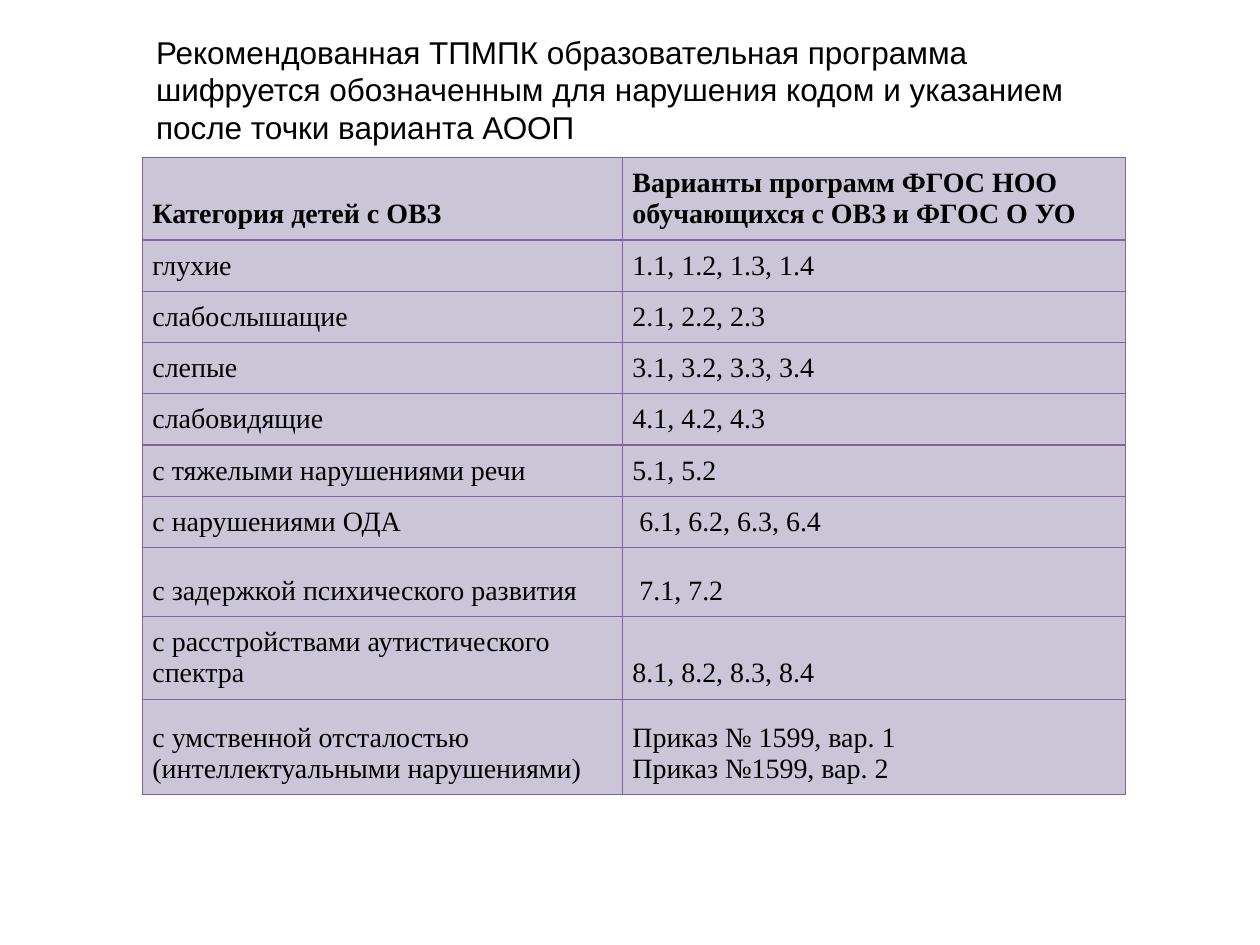
from collections import namedtuple

from lxml.etree import SubElement
from pptx import Presentation
from pptx.dml.color import RGBColor as Color
from pptx.enum.text import MSO_ANCHOR as Anchor, MSO_AUTO_SIZE as AutoSize
from pptx.oxml.ns import qn
from pptx.util import Inches, Pt

Box = namedtuple("Box", "left top width height")

WIDTH, HEIGHT = Inches(10), Inches(7.5)
COLORS = {"text": "000000", "cell": "CCC5D8", "border": "8064A2"}
TITLE_FONT = {"name": "Arial", "size": Pt(18)}
CELL_FONT = {"name": "Times New Roman", "size": Pt(16)}
CELL_MARGIN = Inches(0.08)
CELL_FORMAT = {
    "vertical_anchor": Anchor.BOTTOM,
    "margin_left": CELL_MARGIN,
    "margin_right": CELL_MARGIN,
    "margin_top": CELL_MARGIN,
    "margin_bottom": CELL_MARGIN,
}
BORDER_WIDTH = Pt(0.79)

TITLE = (
    "Рекомендованная ТПМПК образовательная программа шифруется "
    "обозначенным для нарушения кодом и указанием после точки варианта АООП"
)
COLUMN_SHARES = [3.81, 3.99]
ROW_SHARES = [0.55] + [0.35] * 6 + [0.55] * 2 + [0.76]
PROGRAMS = [
    ("Категория детей с ОВЗ ", "Варианты программ ФГОС НОО обучающихся с ОВЗ и ФГОС О УО"),
    ("глухие", "1.1, 1.2, 1.3, 1.4"),
    ("слабослышащие ", "2.1, 2.2, 2.3"),
    ("слепые ", "3.1, 3.2, 3.3, 3.4"),
    ("слабовидящие", "4.1, 4.2, 4.3"),
    ("с тяжелыми нарушениями речи ", "5.1, 5.2"),
    ("с нарушениями ОДА", " 6.1, 6.2, 6.3, 6.4"),
    ("с задержкой психического развития", " 7.1, 7.2 "),
    ("с расстройствами аутистического спектра ", "8.1, 8.2, 8.3, 8.4"),
    (
        "с умственной отсталостью (интеллектуальными нарушениями) ",
        "Приказ № 1599, вар. 1\nПриказ №1599, вар. 2",
    ),
]


def share_box(left, top, width, height):
    return Box(int(WIDTH * left), int(HEIGHT * top), int(WIDTH * width), int(HEIGHT * height))


def set_all(target, values):
    for name, value in values.items():
        setattr(target, name, value)


def write_text(frame, text, font):
    frame.text = text
    for para in frame.paragraphs:
        for span in para.runs:
            set_all(span.font, font)
            span.font.color.rgb = Color.from_string(COLORS["text"])


def add_borders(cell):
    properties = cell._tc.get_or_add_tcPr()
    for position, side in enumerate(("lnL", "lnR", "lnT", "lnB")):
        line = SubElement(properties, qn(f"a:{side}"), w=str(BORDER_WIDTH))
        fill = SubElement(line, qn("a:solidFill"))
        SubElement(fill, qn("a:srgbClr"), val=COLORS["border"])
        properties.insert(position, line)


def add_title(page, box):
    frame = page.shapes.add_textbox(*box).text_frame
    set_all(frame, {"word_wrap": True, "auto_size": AutoSize.SHAPE_TO_FIT_TEXT})
    write_text(frame, TITLE, TITLE_FONT)


def add_programs(page, box):
    table = page.shapes.add_table(len(PROGRAMS), len(COLUMN_SHARES), *box).table
    set_all(table, {"first_row": False, "horz_banding": False})
    for column, share in zip(table.columns, COLUMN_SHARES):
        column.width = int(box.width * share / sum(COLUMN_SHARES))
    for row, share in zip(table.rows, ROW_SHARES):
        row.height = int(box.height * share / sum(ROW_SHARES))
    for row_number, texts in enumerate(PROGRAMS):
        for column_number, text in enumerate(texts):
            cell = table.cell(row_number, column_number)
            set_all(cell, CELL_FORMAT)
            cell.fill.solid()
            cell.fill.fore_color.rgb = Color.from_string(COLORS["cell"])
            add_borders(cell)
            write_text(cell.text_frame, text, {**CELL_FONT, "bold": row_number == 0})


def main():
    deck = Presentation()
    set_all(deck, {"slide_width": WIDTH, "slide_height": HEIGHT})
    page = deck.slides.add_slide(deck.slide_layouts[6])
    add_programs(page, share_box(0.113, 1 / 6, 0.78, 0.6))
    add_title(page, share_box(0.114, 0.028, 0.78, 0.135))
    deck.save("out.pptx")


if __name__ == "__main__":
    main()
